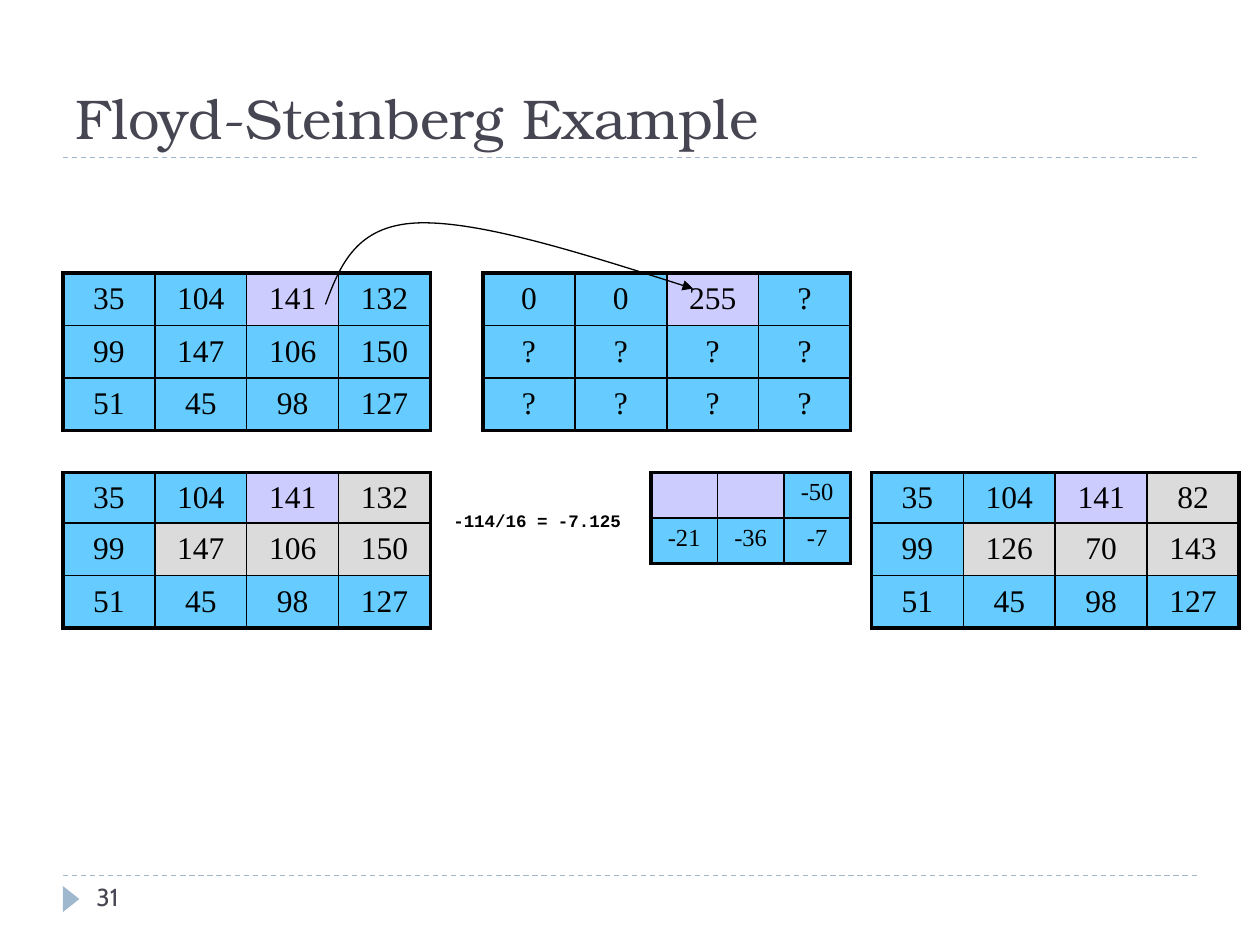
"""Build the slide with the Floyd-Steinberg dithering example."""
from dataclasses import dataclass

from lxml.etree import SubElement
from pptx import Presentation
from pptx.dml.color import RGBColor
from pptx.enum.dml import MSO_LINE
from pptx.enum.shapes import MSO_CONNECTOR, MSO_SHAPE
from pptx.enum.text import MSO_ANCHOR, MSO_AUTO_SIZE, PP_ALIGN
from pptx.oxml.ns import qn
from pptx.slide import Slide
from pptx.util import Pt

COLORS = {
    "ink": "000000",
    "title": "464653",
    "accent": "9FB8CD",
    "b": "66CCFF",
    "v": "CCCCFF",
    "g": "DBDBDB",
}


@dataclass
class SlideStyle:
    slide: Slide
    title_font: str = "TeX Gyre Bonum"
    number_font: str = "Cabin"
    cell_font: str = "Times New Roman"
    formula_font: str = "Courier New"
    outer_border: float = 2.25
    inner_border: float = 1

    def color(self, name):
        return RGBColor.from_string(COLORS[name])

    def styled_run(self, paragraph, text, font, size, color, bold=False):
        run = paragraph.add_run()
        run.text = text
        run.font.name = font
        run.font.size = Pt(size)
        run.font.bold = bold
        run.font.color.rgb = self.color(color)

    def title(self, text, left, top, width, height):
        heading = self.slide.shapes.title
        heading.left, heading.top = Pt(left), Pt(top)
        heading.width, heading.height = Pt(width), Pt(height)
        frame = heading.text_frame
        frame.auto_size = MSO_AUTO_SIZE.NONE
        frame.vertical_anchor = MSO_ANCHOR.BOTTOM
        frame.paragraphs[0].alignment = PP_ALIGN.LEFT
        self.styled_run(frame.paragraphs[0], text, self.title_font, 32, "title")

    def text(self, text, left, top, width, height, font, size, color, bold=False):
        label = self.slide.shapes.add_textbox(Pt(left), Pt(top), Pt(width), Pt(height))
        label.text_frame.word_wrap = True
        self.styled_run(label.text_frame.paragraphs[0], text, font, size, color, bold)

    def rule(self, left, right, y):
        divider = self.slide.shapes.add_connector(
            MSO_CONNECTOR.STRAIGHT, Pt(left), Pt(y), Pt(right), Pt(y))
        divider.line.color.rgb = self.color("accent")
        divider.line.width = Pt(0.75)
        divider.line.dash_style = MSO_LINE.DASH
        SubElement(divider.element.spPr, qn("a:effectLst"))

    def marker(self, left, top, width, height):
        triangle = self.slide.shapes.add_shape(
            MSO_SHAPE.ISOSCELES_TRIANGLE, Pt(left), Pt(top), Pt(width), Pt(height))
        triangle.rotation = 90
        triangle.shadow.inherit = False
        triangle.fill.solid()
        triangle.fill.fore_color.rgb = self.color("accent")
        triangle.line.fill.background()

    def curved_arrow(self, start, *points):
        builder = self.slide.shapes.build_freeform(*map(Pt, start), scale=1.0)
        builder.add_line_segments([(Pt(x), Pt(y)) for x, y in points], close=False)
        arrow = builder.convert_to_shape()
        arrow.shadow.inherit = False
        arrow.fill.background()
        arrow.line.color.rgb = self.color("ink")
        arrow.line.width = Pt(0.75)
        segments = list(arrow.element.iter(qn("a:lnTo")))
        outline = segments[0].getparent()
        for first in range(0, len(segments), 3):
            curve = SubElement(outline, qn("a:cubicBezTo"))
            for segment in segments[first:first + 3]:
                curve.append(segment[0])
                outline.remove(segment)
        SubElement(arrow.element.spPr.find(qn("a:ln")), qn("a:tailEnd"), type="triangle")

    def border(self, cell, outer_sides):
        properties = cell._tc.get_or_add_tcPr()
        for index, side in enumerate("LRTB"):
            width = self.outer_border if side in outer_sides else self.inner_border
            line = SubElement(properties, qn(f"a:ln{side}"), w=str(Pt(width)))
            fill = SubElement(line, qn("a:solidFill"))
            SubElement(fill, qn("a:srgbClr"), val=COLORS["ink"])
            properties.insert(index, line)

    def grid(self, left, top, values, fills, column, heights, size=18,
             anchor=MSO_ANCHOR.MIDDLE):
        rows = [line.split(",") for line in values]
        last_row, last_column = len(rows) - 1, len(rows[0]) - 1
        table = self.slide.shapes.add_table(
            len(rows), len(rows[0]), Pt(left), Pt(top),
            Pt(column * len(rows[0])), Pt(sum(heights))).table
        table.first_row = table.horz_banding = False
        for table_column in table.columns:
            table_column.width = Pt(column)
        for r, row in enumerate(rows):
            table.rows[r].height = Pt(heights[r])
            for c, value in enumerate(row):
                cell = table.cell(r, c)
                cell.vertical_anchor = anchor
                cell.fill.solid()
                cell.fill.fore_color.rgb = self.color(fills[r][c])
                edges = {"L": c == 0, "R": c == last_column,
                         "T": r == 0, "B": r == last_row}
                self.border(cell, [side for side in edges if edges[side]])
                paragraph = cell.text_frame.paragraphs[0]
                paragraph.alignment = PP_ALIGN.CENTER
                if value:
                    self.styled_run(paragraph, value, self.cell_font, size, "ink")
                else:
                    SubElement(paragraph._p, qn("a:endParaRPr"), sz=str(size * 100))


def main():
    deck = Presentation()
    deck.slide_width, deck.slide_height = Pt(720), Pt(540)
    page = SlideStyle(deck.slides.add_slide(deck.slide_layouts[5]))

    for y in (500.4, 90):
        page.rule(36, 684, y)
    page.marker(33.1, 509, 15, 9.5)
    page.text("31", 48, 500.4, 156, 28.8, page.number_font, 14, "title")
    page.title("Floyd-Steinberg Example", 36, 18, 648, 72)

    pixels = ["35,104,141,132", "99,147,106,150", "51,45,98,127"]
    dithered = ["0,0,255,?", "?,?,?,?", "?,?,?,?"]
    corrected = ["35,104,141,82", "99,126,70,143", "51,45,98,127"]
    current = ["bbvb", "bbbb", "bbbb"]
    neighbours = ["bbvg", "bggg", "bbbb"]
    even, compact = [30, 30, 30], [28.5, 30, 30]
    for left, top, values, fills, heights in (
        (276, 156, dithered, current, even),
        (36, 156, pixels, current, even),
        (36, 270, pixels, neighbours, compact),
        (498, 270, corrected, neighbours, compact),
    ):
        page.grid(left, top, values, fills, 52.5, heights)
    page.grid(372, 270, [",,-50", "-21,-36,-7"], ["vvb", "bbb"], 38, [26, 26],
              14, MSO_ANCHOR.TOP)

    page.curved_arrow((186, 174), (194.4, 151.2), (203.8, 128.9), (238.3, 127.4),
                      (273.6, 126), (334.8, 145.4), (396, 164.9))
    page.text("-114/16 = -7.125", 252, 288, 114, 19.2, page.formula_font, 10, "ink", True)

    deck.save("out.pptx")


if __name__ == "__main__":
    main()
